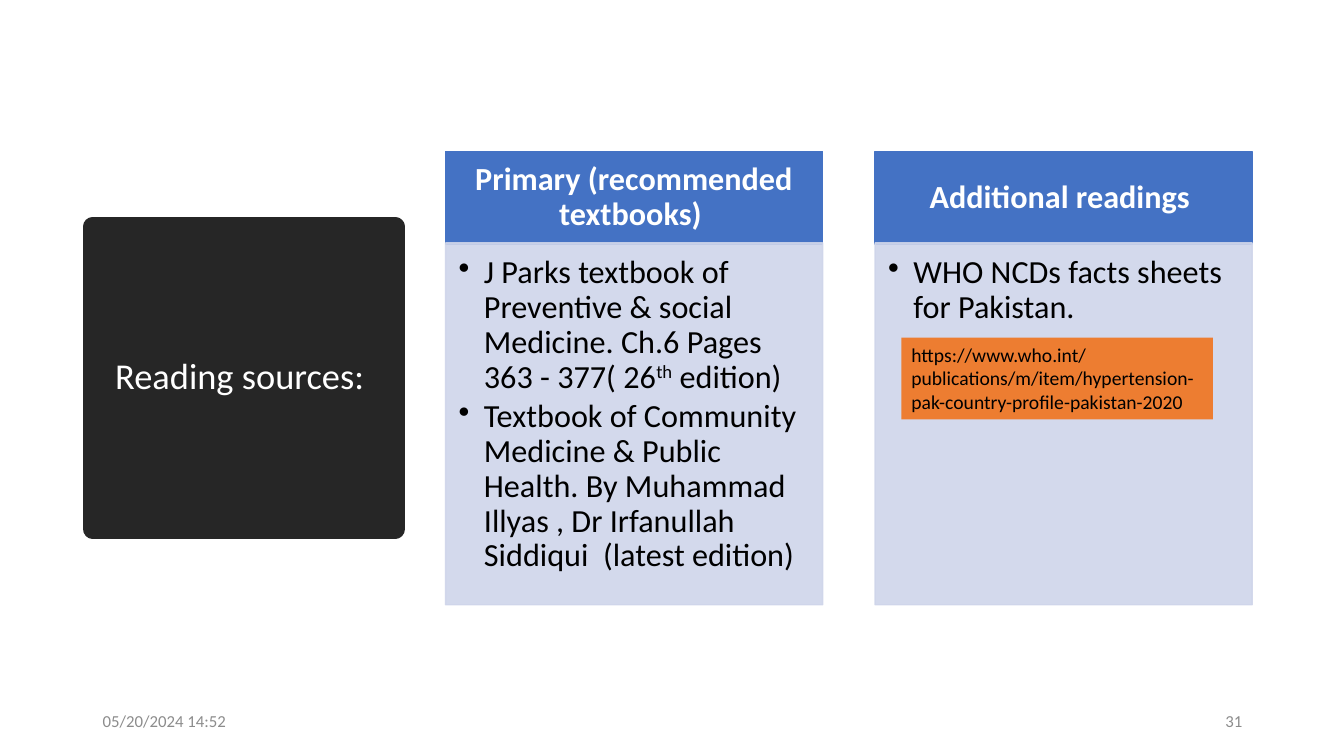
from pptx import Presentation
from pptx.dml.color import RGBColor
from pptx.enum.shapes import MSO_SHAPE
from pptx.enum.text import MSO_ANCHOR, PP_ALIGN
from pptx.oxml.ns import qn
from pptx.util import Inches, Pt
from lxml import etree

RECTANGLE = MSO_SHAPE.RECTANGLE
TOP, MIDDLE = MSO_ANCHOR.TOP, MSO_ANCHOR.MIDDLE
LEFT, CENTER, RIGHT = PP_ALIGN.LEFT, PP_ALIGN.CENTER, PP_ALIGN.RIGHT

COLUMN_WIDTH, COLUMN_STEP = 3.74, 4.26
HEADER_TOP, HEADER_HEIGHT = 1.5, 0.92
BODY_TOP, BODY_HEIGHT = 2.41, 3.59
READINGS = [
    ("Primary (recommended textbooks) ", [
        [("J Parks textbook of Preventive & social Medicine. Ch.6 Pages 363 - 377( 26", False),
         ("th", True), (" edition)", False)],
        [("Textbook of Community Medicine & Public Health. By Muhammad Illyas , "
          "Dr Irfanullah Siddiqui  (latest edition)", False)],
    ]),
    ("Additional readings ", [[("WHO NCDs facts sheets for Pakistan.", False)]]),
]


def add_box(left, top, width, height, fill=None, line_width=0, opacity=100):
    """Add a rectangle whose outline, if any, has the colour of its fill."""
    box = slide.shapes.add_shape(RECTANGLE, Inches(left), Inches(top), Inches(width), Inches(height))
    box.shadow.inherit = False
    if fill:
        box.fill.solid()
        box.fill.fore_color.rgb = RGBColor.from_string(fill)
    else:
        box.fill.background()
    if line_width:
        box.line.color.rgb = RGBColor.from_string(fill)
        box.line.width = Pt(line_width)
        etree.SubElement(box.line._ln, qn("a:round"))
    else:
        box.line.fill.background()
    if opacity < 100:
        for color in box._element.spPr.iter(qn("a:srgbClr")):
            etree.SubElement(color, qn("a:alpha"), val=str(opacity * 1000))
    return box


def write(box, paragraphs, size, color, align=LEFT, anchor=MIDDLE, bold=False,
          line_spacing=1.0, bullet=False, insets=(0.1, 0.05, 0.1, 0.05)):
    """Fill a box with paragraphs, each a list of (text, is_superscript) runs."""
    frame = box.text_frame
    frame.word_wrap = True
    frame.vertical_anchor = anchor
    (frame.margin_left, frame.margin_top,
     frame.margin_right, frame.margin_bottom) = map(Inches, insets)
    for index, runs in enumerate(paragraphs):
        paragraph = frame.add_paragraph() if index else frame.paragraphs[0]
        paragraph.alignment = align
        paragraph.line_spacing = line_spacing
        if bullet:
            paragraph.space_after = Pt(3.5)
            properties = paragraph._p.get_or_add_pPr()
            properties.set("marL", str(Inches(0.25)))
            properties.set("indent", str(-Inches(0.25)))
            etree.SubElement(properties, qn("a:buChar"), char="•")
        for text, is_superscript in runs:
            run = paragraph.add_run()
            run.text = text
            run.font.name = "Calibri"
            run.font.size = Pt(size)
            run.font.bold = bold
            run.font.color.rgb = RGBColor.from_string(color)
            if is_superscript:
                run.font._element.set("baseline", "30000")


presentation = Presentation()
presentation.slide_width = Inches(13.33)
presentation.slide_height = Inches(7.5)
slide = presentation.slides.add_slide(presentation.slide_layouts[6])

title = add_box(0.92, 2.25, 3, 3, "262626", line_width=13.75)
write(title, [[("Reading sources: ", False)]], 26, "FFFFFF", align=CENTER, line_spacing=0.9)

for column, (heading, items) in enumerate(READINGS):
    left = 4.42 + column * COLUMN_STEP
    header = add_box(left, HEADER_TOP, COLUMN_WIDTH, HEADER_HEIGHT, "4472C4", line_width=1)
    write(header, [[(heading, False)]], 23, "FFFFFF", align=CENTER, bold=True,
          line_spacing=0.9, insets=(0.18, 0.1, 0.18, 0.1))
    body = add_box(left, BODY_TOP, COLUMN_WIDTH, BODY_HEIGHT, "CFD5EA", line_width=1, opacity=90)
    write(body, items, 23, "000000", anchor=TOP, line_spacing=0.9, bullet=True,
          insets=(0.13, 0.13, 0.18, 0.2))

address = add_box(8.94, 3.35, 3.09, 0.81, "ED7D31")
write(address, [[("https://www.who.int/publications/m/item/"
                  "hypertension-pak-country-profile-pakistan-2020", False)]],
      14, "000000", anchor=TOP)

for left, text, align in [(0.92, "05/20/2024 14:52", LEFT), (9.42, "31", RIGHT)]:
    footer = add_box(left, 6.95, 3, 0.4)
    write(footer, [[(text, False)]], 12, "8C8C8C", align=align)

presentation.save("out.pptx")
